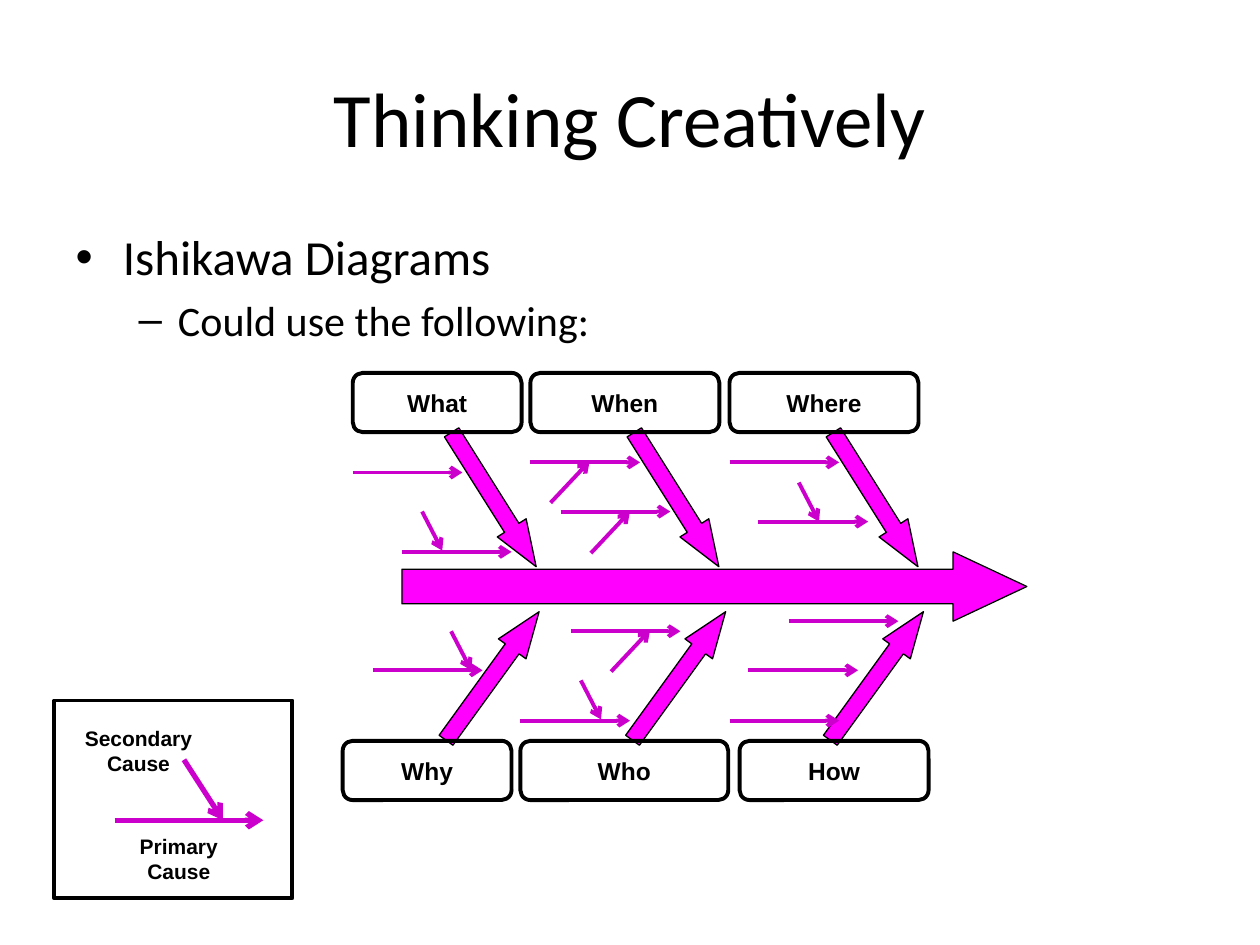
from dataclasses import dataclass

from lxml.etree import SubElement
from pptx import Presentation
from pptx.dml.color import RGBColor
from pptx.enum.shapes import MSO_CONNECTOR as Connector, MSO_SHAPE as Shape
from pptx.enum.text import MSO_ANCHOR as Anchor, PP_ALIGN as Align
from pptx.oxml.ns import qn
from pptx.util import Pt

EMU_PER_PX = 9144


@dataclass(frozen=True)
class Theme:
    """Colours, fonts and sizes of the slide."""
    ink: str = "000000"
    paper: str = "FFFFFF"
    bone: str = "FF00FF"
    cause: str = "CC00CC"
    text_font: str = "Calibri"
    label_font: str = "Arial"
    title_size: int = 44
    list_sizes: tuple = (28, 24)
    label_size: int = 14
    legend_size: int = 12
    bone_line: float = 0.75
    line: float = 2.25
    legend_line: float = 3


THEME = Theme()


@dataclass(frozen=True)
class Box:
    """A rectangle in px."""
    left: int
    top: int
    width: int
    height: int

    def inside(self, left, top, width, height):
        """Return a box placed relative to this one."""
        return Box(self.left + left, self.top + top, width, height)

    def emu(self):
        """Return the four lengths in EMU."""
        return [px(n) for n in (self.left, self.top, self.width, self.height)]


def px(length):
    """Turn px into EMU."""
    return length * EMU_PER_PX


def write(para, text, *, size, font, bold=None, align=None):
    """Write formatted text into a paragraph."""
    para.alignment = align
    span = para.add_run()
    span.text = text
    span.font.size, span.font.name, span.font.bold = Pt(size), font, bold
    span.font.color.rgb = RGBColor.from_string(THEME.ink)


def add_outline(page, kind, box, *, fill=None, line=THEME.line):
    """Add a preset shape with an optional fill and line."""
    shape = page.shapes.add_shape(kind, *box.emu())
    shape.shadow.inherit = False
    if fill:
        shape.fill.solid()
        shape.fill.fore_color.rgb = RGBColor.from_string(fill)
    else:
        shape.fill.background()
    if line:
        shape.line.width = Pt(line)
        shape.line.color.rgb = RGBColor.from_string(THEME.ink)
    else:
        shape.line.fill.background()
    return shape


def add_label(page, box, lines, *, size, line=THEME.line):
    """Add a rounded label with centred bold text."""
    frame = add_outline(page, Shape.ROUNDED_RECTANGLE, box, line=line).text_frame
    frame.word_wrap = True
    frame.vertical_anchor = Anchor.MIDDLE
    frame.margin_top = frame.margin_bottom = 0
    for index, text in enumerate(lines):
        para = frame.add_paragraph() if index else frame.paragraphs[0]
        write(para, text, size=size, font=THEME.label_font, bold=True, align=Align.CENTER)


def add_bone(page, box, head, turn=0):
    """Add a block arrow with the given head length and rotation."""
    bone = add_outline(page, Shape.RIGHT_ARROW, box, fill=THEME.bone, line=THEME.bone_line)
    bone.adjustments[0], bone.adjustments[1] = 0.5, head
    bone.rotation = turn


def add_cause(page, box, start, step, width=THEME.line):
    """Add a thin arrow from a start point inside a box."""
    x, y = box.left + start[0], box.top + start[1]
    ends = (x, y, x + step[0], y + step[1])
    arrow = page.shapes.add_connector(Connector.STRAIGHT, *map(px, ends))
    arrow.line.width = Pt(width)
    arrow.line.color.rgb = RGBColor.from_string(THEME.cause)
    SubElement(arrow.line._get_or_add_ln(), qn("a:tailEnd"), type="arrow")
    SubElement(arrow._element.spPr, qn("a:effectLst"))


def place_text(page, title_box, list_box):
    """Fill the title and body placeholders."""
    title, body = page.shapes.title, page.placeholders[1]
    for holder, box in ((title, title_box), (body, list_box)):
        holder.left, holder.top, holder.width, holder.height = box.emu()
    write(title.text_frame.paragraphs[0], "Thinking Creatively",
          size=THEME.title_size, font=THEME.text_font, align=Align.CENTER)
    for level, text in enumerate(("Ishikawa Diagrams", "Could use the following:")):
        para = body.text_frame.add_paragraph() if level else body.text_frame.paragraphs[0]
        para.level = level
        write(para, text, size=THEME.list_sizes[level], font=THEME.text_font)


def place_fishbone(page, box):
    """Draw the spine, ribs, causes and questions."""
    add_bone(page, box.inside(49, 148, 496, 55), 1.064)
    ribs = ((93, 57.8, (362, 204, 59)), (233, 305.9, (58, 206, 363)))
    for top, turn, lefts in ribs:
        for left in lefts:
            add_bone(page, box.inside(left, top, 126, 27), 1.347, turn)

    primary = ((10, 85), (49, 148), (151, 77), (175, 116), (309, 77), (332, 124),
               (26, 242), (183, 211), (143, 282), (356, 203), (324, 242), (309, 282))
    falling = ((88, 211), (191, 250), (65, 116), (364, 93))
    rising = ((215, 243), (199, 149), (167, 109))
    for start in primary:
        add_cause(page, box, start, (87, 0))

    questions = ((6, (("What", 10, 134), ("When", 151, 150), ("Where", 309, 150))),
                 (298, (("Why", 2, 134), ("Who", 143, 165), ("How", 317, 150))))
    for top, row in questions:
        for text, left, width in row:
            add_label(page, box.inside(left, top, width, 47), [text], size=THEME.label_size)

    for starts, step in ((falling, (16, 31)), (rising, (31, -33))):
        for start in starts:
            add_cause(page, box, start, step)


def place_legend(page, box):
    """Draw the key to primary and secondary causes."""
    add_outline(page, Shape.RECTANGLE, box, fill=THEME.paper)
    for start, step in (((48, 95), (118, 0)), ((103, 47), (31, 48))):
        add_cause(page, box, start, step, THEME.legend_line)
    for left, top, rank in ((32, 102, "Primary"), (0, 16, "Secondary")):
        add_label(page, box.inside(left, top, 134, 47), [rank, "Cause"],
                  size=THEME.legend_size, line=None)


def main():
    """Build and save the deck."""
    deck = Presentation()
    deck.slide_width, deck.slide_height = px(1000), px(750)
    page = deck.slides.add_slide(deck.slide_layouts[1])
    place_text(page, Box(50, 30, 900, 125), Box(50, 175, 900, 495))
    place_fishbone(page, Box(270, 290, 550, 350))
    place_legend(page, Box(43, 556, 189, 157))
    deck.save("out.pptx")


if __name__ == "__main__":
    main()
